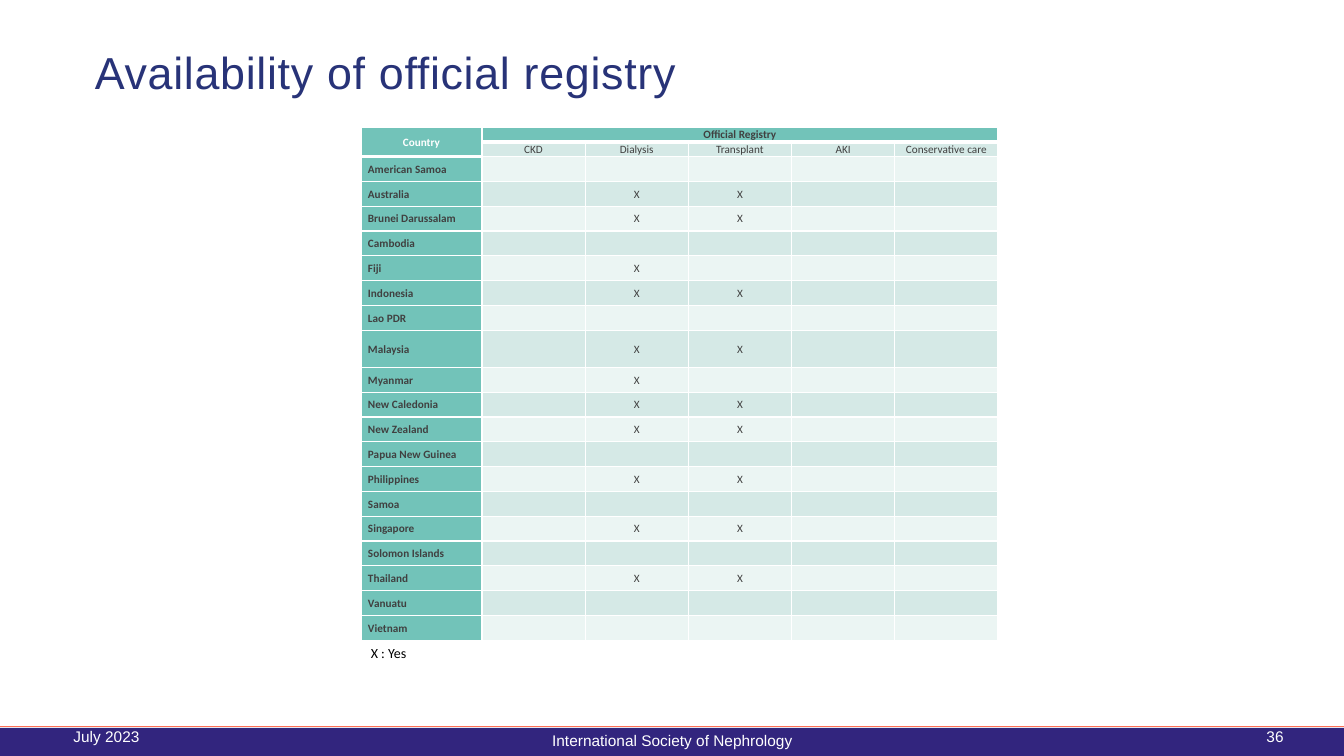
from dataclasses import dataclass

from lxml import etree
from pptx import Presentation
from pptx import util as u
from pptx.dml.color import RGBColor
from pptx.enum import shapes, text
from pptx.oxml.ns import qn


@dataclass(frozen=True)
class Theme:
    heading_font: str = "Arial"
    table_font: str = "Calibri"
    title_size: int = 32
    footer_size: int = 11
    legend_size: int = 10
    cell_size: int = 8
    title: str = "283378"
    bar: str = "32257E"
    rule: str = "FE7055"
    teal: str = "72C3B9"
    band_dark: str = "D5E9E6"
    band_light: str = "EBF5F3"
    ink: str = "404040"
    black: str = "000000"
    white: str = "FFFFFF"


LEFT, CENTER, RIGHT = text.PP_ALIGN.LEFT, text.PP_ALIGN.CENTER, text.PP_ALIGN.RIGHT
REGISTRIES = ["CKD", "Dialysis", "Transplant", "AKI", "Conservative care"]
BOTH = ("Dialysis", "Transplant")
COUNTRIES = {
    "American Samoa": (),
    "Australia": BOTH,
    "Brunei Darussalam": BOTH,
    "Cambodia": (),
    "Fiji": ("Dialysis",),
    "Indonesia": BOTH,
    "Lao PDR": (),
    "Malaysia": BOTH,
    "Myanmar": ("Dialysis",),
    "New Caledonia": BOTH,
    "New Zealand": BOTH,
    "Papua New Guinea": (),
    "Philippines": BOTH,
    "Samoa": (),
    "Singapore": BOTH,
    "Solomon Islands": (),
    "Thailand": BOTH,
    "Vanuatu": (),
    "Vietnam": (),
}


class SlideBuilder:
    def __init__(self, slide, theme):
        self.slide, self.theme = slide, theme

    def place(self, box):
        return [u.Inches(length) for length in box]

    def add_words(self, paragraph, words, font, size, color, bold=False, align=LEFT):
        paragraph.alignment = align
        run = paragraph.add_run()
        run.text = words
        run.font.name, run.font.size, run.font.bold = font, u.Pt(size), bold
        run.font.color.rgb = RGBColor.from_string(color)
        return run

    def title(self, words, box):
        heading = self.slide.shapes.title
        heading.left, heading.top, heading.width, heading.height = self.place(box)
        frame = heading.text_frame
        frame.auto_size = text.MSO_AUTO_SIZE.NONE
        frame.vertical_anchor = text.MSO_ANCHOR.MIDDLE
        frame.paragraphs[0].line_spacing = 0.9
        run = self.add_words(frame.paragraphs[0], words, self.theme.heading_font,
                             self.theme.title_size, self.theme.title)
        run._r.get_or_add_rPr().set("spc", "50")

    def label(self, words, box, font, size, color, align=LEFT,
              anchor=text.MSO_ANCHOR.MIDDLE):
        frame = self.slide.shapes.add_textbox(*self.place(box)).text_frame
        frame.word_wrap = True
        frame.vertical_anchor = anchor
        self.add_words(frame.paragraphs[0], words, font, size, color, align=align)

    def bar(self, box, color):
        band = self.slide.shapes.add_shape(shapes.MSO_SHAPE.RECTANGLE, *self.place(box))
        band.shadow.inherit = False
        band.fill.solid()
        band.fill.fore_color.rgb = RGBColor.from_string(color)
        band.line.fill.background()

    def rule(self, ends, color, width):
        line = self.slide.shapes.add_connector(
            shapes.MSO_CONNECTOR.STRAIGHT, *self.place(ends))
        line.line.color.rgb = RGBColor.from_string(color)
        line.line.width = u.Pt(width)
        etree.SubElement(line._element.spPr, qn("a:effectLst"))

    def table(self, box, widths, heights):
        grid = self.slide.shapes.add_table(
            len(heights), len(widths), *self.place(box)).table
        for column, width in zip(grid.columns, widths):
            column.width = u.Inches(width)
        for row, height in zip(grid.rows, heights):
            row.height = u.Inches(height)
        return grid

    def cell(self, cell, words, fill, color=None, bold=False, align=CENTER, bottom=1):
        cell.margin_left = cell.margin_right = u.Inches(0.07)
        cell.margin_top = cell.margin_bottom = 0
        cell.vertical_anchor = text.MSO_ANCHOR.MIDDLE
        paragraph = cell.text_frame.paragraphs[0]
        paragraph.line_spacing = 1.07
        if words:
            self.add_words(paragraph, words, self.theme.table_font, self.theme.cell_size,
                           color or self.theme.ink, bold, align)
        else:
            # Keeps blank cells from stretching their row
            end = etree.SubElement(paragraph._p, qn("a:endParaRPr"))
            end.set("sz", str(self.theme.cell_size * 100))
        # Borders come before the fill in the cell properties
        properties = cell._tc.get_or_add_tcPr()
        for side, width in (("L", 1), ("R", 1), ("T", 1), ("B", bottom)):
            edge = etree.SubElement(properties, qn(f"a:ln{side}"), w=str(u.Pt(width)))
            paint = etree.SubElement(edge, qn("a:solidFill"))
            etree.SubElement(paint, qn("a:srgbClr"), val=self.theme.white)
        cell.fill.solid()
        cell.fill.fore_color.rgb = RGBColor.from_string(fill)


def add_registry_table(builder):
    theme = builder.theme
    left, top, width, height = box = (3.58, 1.26, 6.32, 5.08)
    country_width, header_height, tall_height = 1.2, 0.14, 0.37
    registry_width = (width - country_width) / len(REGISTRIES)
    row_height = (height - 2 * header_height - tall_height) / (len(COUNTRIES) - 1)
    heights = [header_height] * 2 + [
        tall_height if country == "Malaysia" else row_height for country in COUNTRIES]
    grid = builder.table(box, [country_width] + [registry_width] * len(REGISTRIES), heights)

    # Two header rows
    grid.cell(0, 0).merge(grid.cell(1, 0))
    grid.cell(0, 1).merge(grid.cell(0, len(REGISTRIES)))
    builder.cell(grid.cell(0, 0), "Country", theme.teal, theme.white, bold=True, bottom=3)
    builder.cell(grid.cell(1, 0), "", theme.teal, bottom=3)
    for col, registry in enumerate(REGISTRIES, 1):
        builder.cell(grid.cell(0, col), "Official Registry" if col == 1 else "",
                     theme.teal, bold=True, bottom=3)
        builder.cell(grid.cell(1, col), registry, theme.band_dark)

    # One banded row per country
    for row, (country, available) in enumerate(COUNTRIES.items(), 2):
        band = theme.band_dark if row % 2 else theme.band_light
        builder.cell(grid.cell(row, 0), country, theme.teal, bold=True, align=LEFT)
        for col, registry in enumerate(REGISTRIES, 1):
            builder.cell(grid.cell(row, col), "X" if registry in available else "", band)


def main():
    deck = Presentation()
    deck.slide_width, deck.slide_height = u.Inches(13.33), u.Inches(7.5)
    theme = Theme()
    builder = SlideBuilder(deck.slides.add_slide(deck.slide_layouts[5]), theme)

    # Footer band
    builder.bar((0, 7.22, 13.33, 0.28), theme.bar)
    builder.rule((0, 7.21, 13.33, 7.21), theme.rule, 0.75)

    # Title, table and legend
    builder.title("Availability of official registry", (0.84, 0.39, 9.26, 0.71))
    add_registry_table(builder)
    builder.label("X : Yes", (3.58, 6.34, 0.75, 0.27), theme.table_font,
                  theme.legend_size, theme.black, anchor=text.MSO_ANCHOR.TOP)

    # Footer texts
    for words, box, align in (
        ("July 2023", (0.63, 7.11, 3, 0.4), LEFT),
        ("International Society of Nephrology", (4.42, 7.15, 4.5, 0.4), CENTER),
        ("36", (9.13, 7.11, 3.7, 0.4), RIGHT),
    ):
        builder.label(words, box, theme.heading_font, theme.footer_size, theme.white, align)

    deck.save("out.pptx")


if __name__ == "__main__":
    main()
